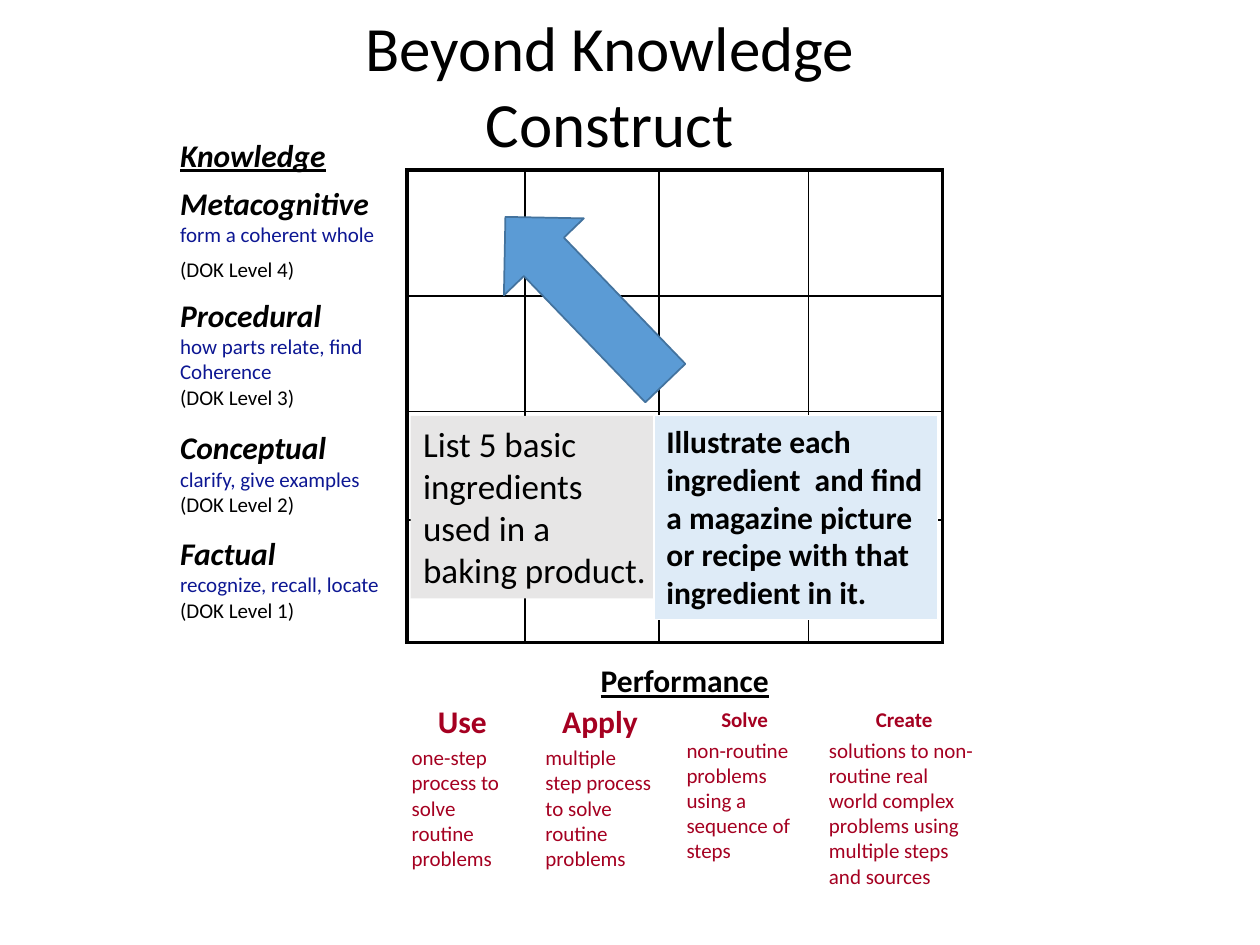
from collections import namedtuple
from dataclasses import dataclass

from lxml import etree
from pptx import Presentation
from pptx.dml.color import RGBColor
from pptx.enum.shapes import MSO_SHAPE
from pptx.enum.text import MSO_ANCHOR, MSO_AUTO_SIZE, PP_ALIGN
from pptx.oxml.ns import qn
from pptx.util import Pt

RECTANGLE, RIGHT_ARROW = MSO_SHAPE.RECTANGLE, MSO_SHAPE.RIGHT_ARROW
LEFT, CENTER = PP_ALIGN.LEFT, PP_ALIGN.CENTER
TOP = MSO_ANCHOR.TOP
GROW = MSO_AUTO_SIZE.SHAPE_TO_FIT_TEXT

Box = namedtuple("Box", "left top width height")


@dataclass(frozen=True)
class Theme:
    font: str = "Calibri"
    ink: str = "000000"
    paper: str = "FFFFFF"
    navy: str = "0D1793"
    crimson: str = "A50021"
    gray: str = "E7E6E6"
    pale_blue: str = "DEEBF7"
    blue: str = "5B9BD5"
    dark_blue: str = "43739E"
    title: int = 36
    task: int = 20
    heading: int = 18
    detail: int = 12


THEME = Theme()
HEADING = {"size": Pt(THEME.heading), "bold": True}
DETAIL = {"size": Pt(THEME.detail)}

LEVELS = [  # top, name, description lines, depth label, gap above the label
    (101.5, "Metacognitive", ["form a coherent whole"], "(DOK Level 4)", 5.5),
    (165.6, "Procedural", ["how parts relate, find", "Coherence"], "(DOK Level 3)", 0),
    (241.2, "Conceptual", ["clarify, give examples"], "(DOK Level 2)", 0),
    (301.7, "Factual", ["recognize, recall, locate"], "(DOK Level 1)", 0),
]
SKILLS = [  # left, top, width, height, name, name size, description
    (228.2, 397.4, 72, 105.1, "Use", THEME.heading,
     "one-step process to solve routine problems"),
    (304.6, 397.4, 76.5, 105.1, "Apply", THEME.heading,
     "multiple step process to solve routine problems"),
    (385.2, 400.3, 80.6, 97.9, "Solve", THEME.detail,
     "non-routine problems using a sequence of steps"),
    (466.6, 400.3, 100.1, 113, "Create", THEME.detail,
     "solutions to non-routine real world complex problems using multiple steps and sources"),
]


def points(box):
    return [Pt(length) for length in box]


def write(shape, paragraphs):
    """Fill a shape with (text, color, font format, alignment, gap above) rows."""
    frame = shape.text_frame
    frame.word_wrap = True
    frame.auto_size = GROW
    frame.vertical_anchor = TOP
    for index, (text, color, style, alignment, gap) in enumerate(paragraphs):
        para = frame.add_paragraph() if index else frame.paragraphs[0]
        para.alignment = alignment
        if gap:
            para.space_before = Pt(gap)
        span = para.add_run()
        span.text = text
        span.font.name = THEME.font
        span.font.color.rgb = RGBColor.from_string(color)
        for name, value in style.items():
            setattr(span.font, name, value)


def add_text(page, box, paragraphs):
    write(page.shapes.add_textbox(*points(box)), paragraphs)


def add_filled(page, kind, box, fill, line=None, weight=1):
    shape = page.shapes.add_shape(kind, *points(box))
    shape.shadow.inherit = False
    shape.fill.solid()
    shape.fill.fore_color.rgb = RGBColor.from_string(fill)
    if line:
        shape.line.color.rgb = RGBColor.from_string(line)
        shape.line.width = Pt(weight)
    else:
        shape.line.fill.background()
    return shape


def add_border(cell, side, weight):
    properties = cell._tc.get_or_add_tcPr()
    line = etree.SubElement(properties, qn(f"a:ln{side}"), w=str(Pt(weight)))
    fill = etree.SubElement(line, qn("a:solidFill"))
    etree.SubElement(fill, qn("a:srgbClr"), val=THEME.ink)


def add_title(page, box):
    style = {"size": Pt(THEME.title)}
    add_text(page, box, [("Beyond Knowledge Construct", THEME.ink, style, CENTER, 0)])


def add_matrix(page, box, widths, heights):
    """Empty grid with a heavy outer frame."""
    table = page.shapes.add_table(len(heights), len(widths), *points(box)).table
    table.first_row = table.horz_banding = False
    for column, width in zip(table.columns, widths):
        column.width = Pt(width)
    for row, height in zip(table.rows, heights):
        row.height = Pt(height)
    last_row, last_column = len(heights) - 1, len(widths) - 1
    for r in range(len(heights)):
        for c in range(len(widths)):
            cell = table.cell(r, c)
            outer = {"L": c == 0, "R": c == last_column, "T": r == 0, "B": r == last_row}
            for side, is_outer in outer.items():
                add_border(cell, side, 2.25 if is_outer else 1)
            cell.fill.background()


def add_knowledge_axis(page, box):
    """Row labels at the left of the grid."""
    style = {**HEADING, "italic": True}
    add_text(page, Box(box.left, box.top, box.width, 28.8),
             [("Knowledge", THEME.ink, {**style, "underline": True}, LEFT, 0)])
    for offset, name, lines, depth, gap in LEVELS:
        paragraphs = [(name, THEME.ink, style, LEFT, 0)]
        paragraphs += [(line, THEME.navy, DETAIL, LEFT, 0) for line in lines]
        paragraphs.append((depth, THEME.ink, DETAIL, LEFT, gap))
        height = 29.2 + 14.6 * (len(lines) + 1) + gap
        add_text(page, Box(box.left, offset, box.width, height), paragraphs)


def add_performance_axis(page, box):
    """Column labels below the grid."""
    add_text(page, box,
             [("Performance", THEME.ink, {**HEADING, "underline": True}, LEFT, 0)])
    for left, top, width, height, name, size, description in SKILLS:
        add_text(page, Box(left, top, width, height), [
            (name, THEME.crimson, {"size": Pt(size), "bold": True}, CENTER, 0),
            (description, THEME.crimson, DETAIL, LEFT, 3),
        ])


def add_tasks(page, box):
    """Two example tasks side by side, the second overlapping the first."""
    basic = add_filled(page, RECTANGLE, Box(box.left, box.top, 144, 104.4), THEME.gray)
    write(basic, [("List 5 basic ingredients used in a baking product.",
                   THEME.ink, {"size": Pt(THEME.task)}, LEFT, 0)])
    right = Box(box.left + box.width - 162, box.top, 162, box.height)
    richer = add_filled(page, RECTANGLE, right, THEME.pale_blue, THEME.paper, 0.75)
    write(richer, [("Illustrate each ingredient  and find a magazine picture "
                    "or recipe with that ingredient in it.",
                    THEME.ink, HEADING, LEFT, 0)])


def add_growth_arrow(page, box):
    arrow = add_filled(page, RIGHT_ARROW, box, THEME.blue, THEME.dark_blue)
    arrow.rotation = 226.1


def main():
    deck = Presentation()
    deck.slide_width, deck.slide_height = Pt(720), Pt(540)
    page = deck.slides.add_slide(deck.slide_layouts[6])
    add_matrix(page, Box(232.5, 97.2, 306, 270),
               [67.5, 76.5, 85.5, 76.5], [72, 66, 62, 70])
    add_title(page, Box(130.3, 1.4, 436.3, 94.3))
    add_knowledge_axis(page, Box(95.8, 74.2, 136.1, 286))
    add_performance_axis(page, Box(336.2, 374.4, 118.8, 28.8))
    add_tasks(page, Box(234.7, 237.6, 301, 116.6))
    add_growth_arrow(page, Box(268.6, 139.7, 131.8, 63.4))
    deck.save("out.pptx")


if __name__ == "__main__":
    main()
